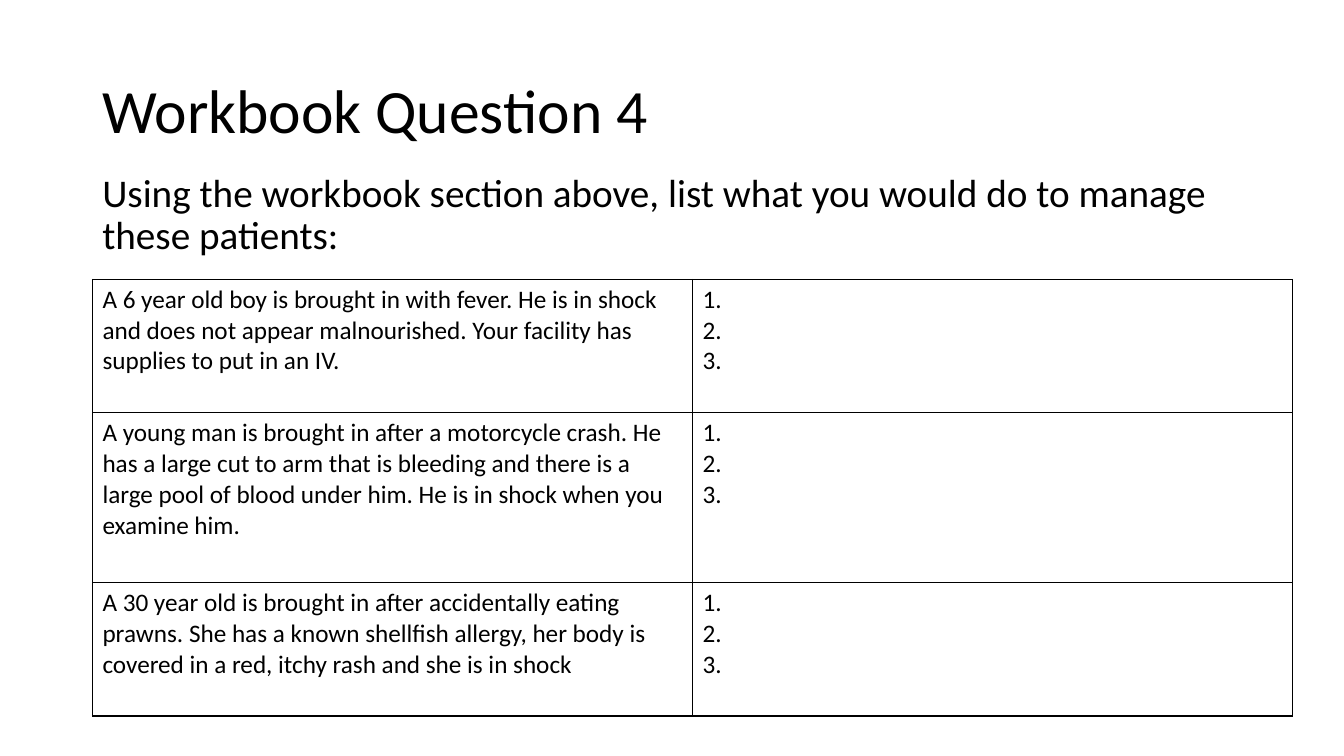
from dataclasses import dataclass

from lxml.etree import SubElement
from pptx import Presentation
from pptx.dml.color import RGBColor
from pptx.enum.text import MSO_VERTICAL_ANCHOR as Anchor
from pptx.oxml.ns import qn
from pptx.util import Cm, Pt


@dataclass(frozen=True)
class Theme:
    font: str = "Calibri"
    ink: str = "000000"
    paper: str = "FFFFFF"
    title: int = 44
    prompt: int = 28
    cell: int = 18
    border: int = 1


theme = Theme()


def write_text(frame, text, size=theme.cell, anchor=Anchor.TOP, spacing=1.0):
    """Fill a text frame, one paragraph for each line of text."""
    frame.word_wrap = True
    frame.vertical_anchor = anchor
    frame.text = text
    for paragraph in frame.paragraphs:
        paragraph.line_spacing = spacing
        paragraph.font.name = theme.font
        paragraph.font.size = Pt(size)
        paragraph.font.color.rgb = RGBColor.from_string(theme.ink)


def draw_borders(cell):
    """Give a cell a thin line on all four sides."""
    properties = cell._tc.get_or_add_tcPr()
    for position, side in enumerate(("lnL", "lnR", "lnT", "lnB")):
        line = SubElement(properties, qn(f"a:{side}"), w=str(Pt(theme.border)))
        fill = SubElement(line, qn("a:solidFill"))
        SubElement(fill, qn("a:srgbClr"), val=theme.ink)
        properties.insert(position, line)


# Slide
presentation = Presentation()
presentation.slide_width = Cm(33.87)
presentation.slide_height = Cm(19.05)
slide = presentation.slides.add_slide(presentation.slide_layouts[6])
slide.background.fill.solid()
slide.background.fill.fore_color.rgb = RGBColor.from_string(theme.paper)

left = Cm(2.33)
text_width = Cm(29.21)

# Title and prompt
title = slide.shapes.add_textbox(left, Cm(1.01), text_width, Cm(3.68))
write_text(title.text_frame, "Workbook Question 4",
           size=theme.title, anchor=Anchor.MIDDLE, spacing=0.9)

prompt = slide.shapes.add_textbox(left, Cm(4.24), text_width, Cm(12.9))
write_text(prompt.text_frame,
           "Using the workbook section above, list what you would do to manage these patients:",
           size=theme.prompt, spacing=0.9)

# Patient cases with numbered answer space
answers = "1.\n2.\n3."
cases = [
    (3.36, "A 6 year old boy is brought in with fever. He is in shock and does not "
           "appear malnourished. Your facility has supplies to put in an IV."),
    (4.28, "A young man is brought in after a motorcycle crash. He has a large cut to "
           "arm that is bleeding and there is a large pool of blood under him. He is in "
           "shock when you examine him."),
    (3.36, "A 30 year old is brought in after accidentally eating prawns. She has a known "
           "shellfish allergy, her body is covered in a red, itchy rash and she is in shock"),
]
table_height = Cm(sum(height for height, _ in cases))
table = slide.shapes.add_table(len(cases), 2, left, Cm(7.04), Cm(30.24), table_height).table
table.first_row = False
table.horz_banding = False

for row, (height, case) in zip(table.rows, cases):
    row.height = Cm(height)
    for cell, text in zip(row.cells, (case, answers)):
        write_text(cell.text_frame, text)
        cell.fill.background()
        draw_borders(cell)

presentation.save("out.pptx")
